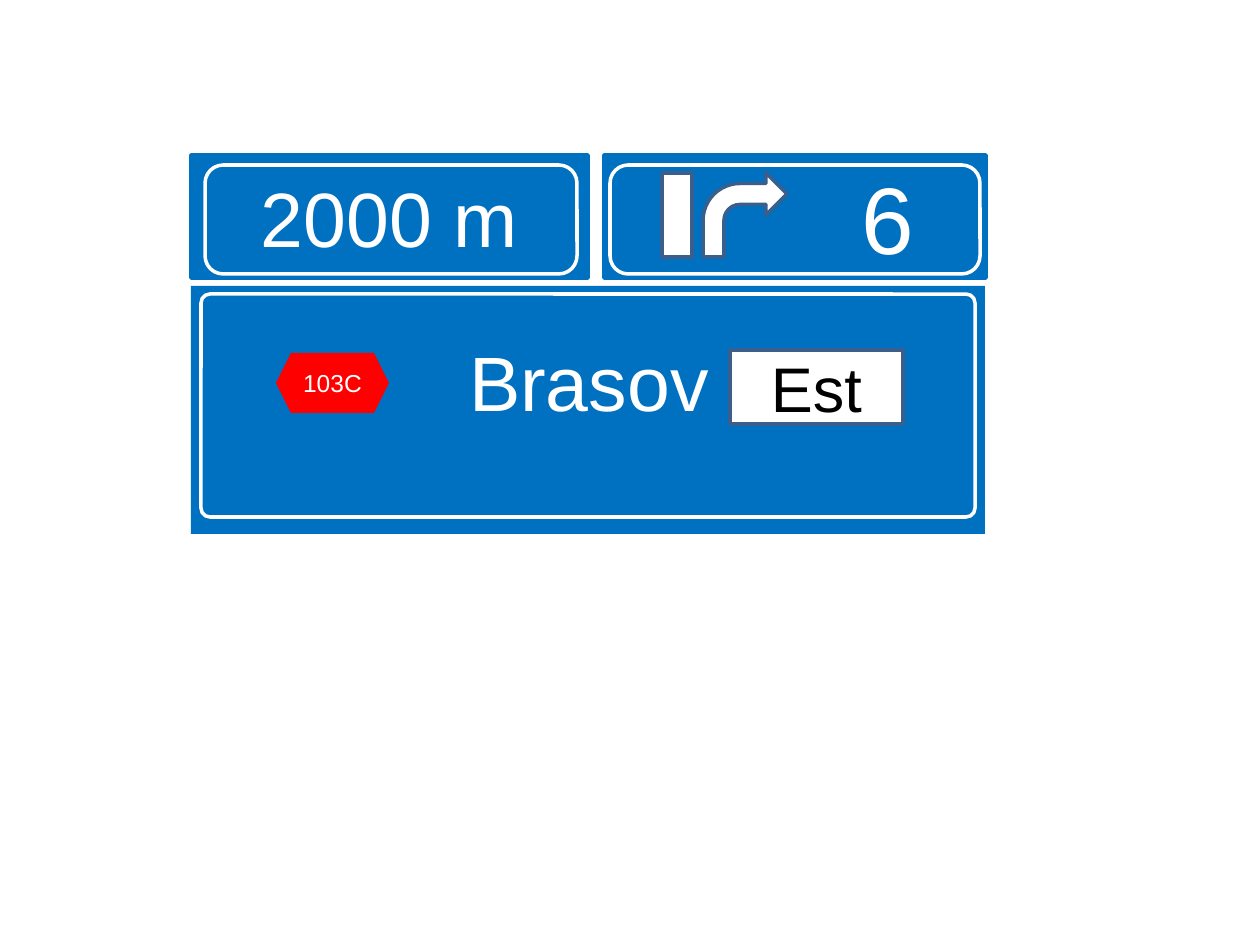
from dataclasses import dataclass

from pptx import Presentation
from pptx.dml.color import RGBColor
from pptx.enum.shapes import MSO_SHAPE
from pptx.enum.text import MSO_ANCHOR, MSO_AUTO_SIZE, PP_ALIGN
from pptx.util import Emu, Inches, Pt

PX_PER_INCH = 126


@dataclass(frozen=True)
class Theme:
    font: str = "Arial"
    blue: str = "0070C0"
    white: str = "FFFFFF"
    black: str = "000000"
    red: str = "FF0000"
    outline: str = "3A5F8C"
    line_width: int = 2
    exit_size: int = 54
    place_size: int = 44
    district_size: int = 36
    road_size: int = 14


THEME = Theme()


def px(length):
    return Emu(round(length * Inches(1) / PX_PER_INCH))


def color(value):
    return RGBColor.from_string(value)


def inside(box, left, top, width, height):
    """Turn a position relative to a box into one on the slide."""
    return box[0] + left, box[1] + top, width, height


def add_part(slide, kind, box, fill=None, line=None, adjustments=()):
    shape = slide.shapes.add_shape(kind, *map(px, box))
    shape.shadow.inherit = False
    for index, value in enumerate(adjustments):
        shape.adjustments[index] = value
    if fill:
        shape.fill.solid()
        shape.fill.fore_color.rgb = color(fill)
    else:
        shape.fill.background()
    if line:
        shape.line.color.rgb = color(line)
        shape.line.width = Pt(THEME.line_width)
    else:
        shape.line.fill.background()
    return shape


def write(shape, text, size, ink=THEME.white, anchor=MSO_ANCHOR.MIDDLE,
          margins=(13, 6, 13, 6)):
    frame = shape.text_frame
    frame.word_wrap = True
    frame.auto_size = MSO_AUTO_SIZE.NONE
    frame.vertical_anchor = anchor
    (frame.margin_left, frame.margin_top,
     frame.margin_right, frame.margin_bottom) = map(px, margins)
    paragraph = frame.paragraphs[0]
    paragraph.alignment = PP_ALIGN.CENTER
    run = paragraph.add_run()
    run.text = text
    run.font.name = THEME.font
    run.font.size = Pt(size)
    run.font.color.rgb = color(ink)


def add_panel(slide, box):
    return add_part(slide, MSO_SHAPE.ROUNDED_RECTANGLE, box,
                    THEME.blue, THEME.blue, [0])


def add_border(slide, box, adjustments=()):
    add_part(slide, MSO_SHAPE.ROUNDED_RECTANGLE, box,
             line=THEME.white, adjustments=adjustments)


def add_destination_panel(slide, box):
    panel = slide.placeholders[1]
    panel.left, panel.top, panel.width, panel.height = map(px, box)
    panel.fill.solid()
    panel.fill.fore_color.rgb = color(THEME.blue)
    write(panel, "Brasov", THEME.place_size, anchor=MSO_ANCHOR.TOP,
          margins=(15, 49, 13, 30))
    add_border(slide, inside(box, 10, 8, 774, 223), [0.04])
    road = add_part(slide, MSO_SHAPE.HEXAGON, inside(box, 85, 67, 113, 60),
                    THEME.red)
    write(road, "103C", THEME.road_size, margins=(0, 6, 0, 6))
    district = add_part(slide, MSO_SHAPE.RECTANGLE,
                        inside(box, 539, 64, 173, 74),
                        THEME.white, THEME.outline)
    write(district, "Est", THEME.district_size, THEME.black)


def add_exit_panel(slide, box):
    write(add_panel(slide, box), "6", THEME.exit_size,
          margins=(198, 6, 13, 6))
    add_part(slide, MSO_SHAPE.RECTANGLE, inside(box, 58, 18, 30, 84),
             THEME.white, THEME.outline)
    add_part(slide, MSO_SHAPE.BENT_ARROW, inside(box, 99, 18, 84, 84),
             THEME.white, THEME.outline, [0.25, 0.25, 0.25, 0.44])
    add_border(slide, inside(box, 6, 10, 370, 109))


def add_distance_panel(slide, box):
    write(add_panel(slide, box), "2000 m", THEME.place_size)
    add_border(slide, inside(box, 14, 10, 372, 109))


def main():
    presentation = Presentation()
    presentation.slide_width = Inches(10)
    presentation.slide_height = Inches(7.5)
    slide = presentation.slides.add_slide(presentation.slide_layouts[0])
    title = slide.shapes.title.element
    title.getparent().remove(title)
    add_destination_panel(slide, (191, 286, 794, 248))
    add_exit_panel(slide, (604, 155, 382, 123))
    add_distance_panel(slide, (191, 155, 397, 123))
    presentation.save("out.pptx")


if __name__ == "__main__":
    main()
